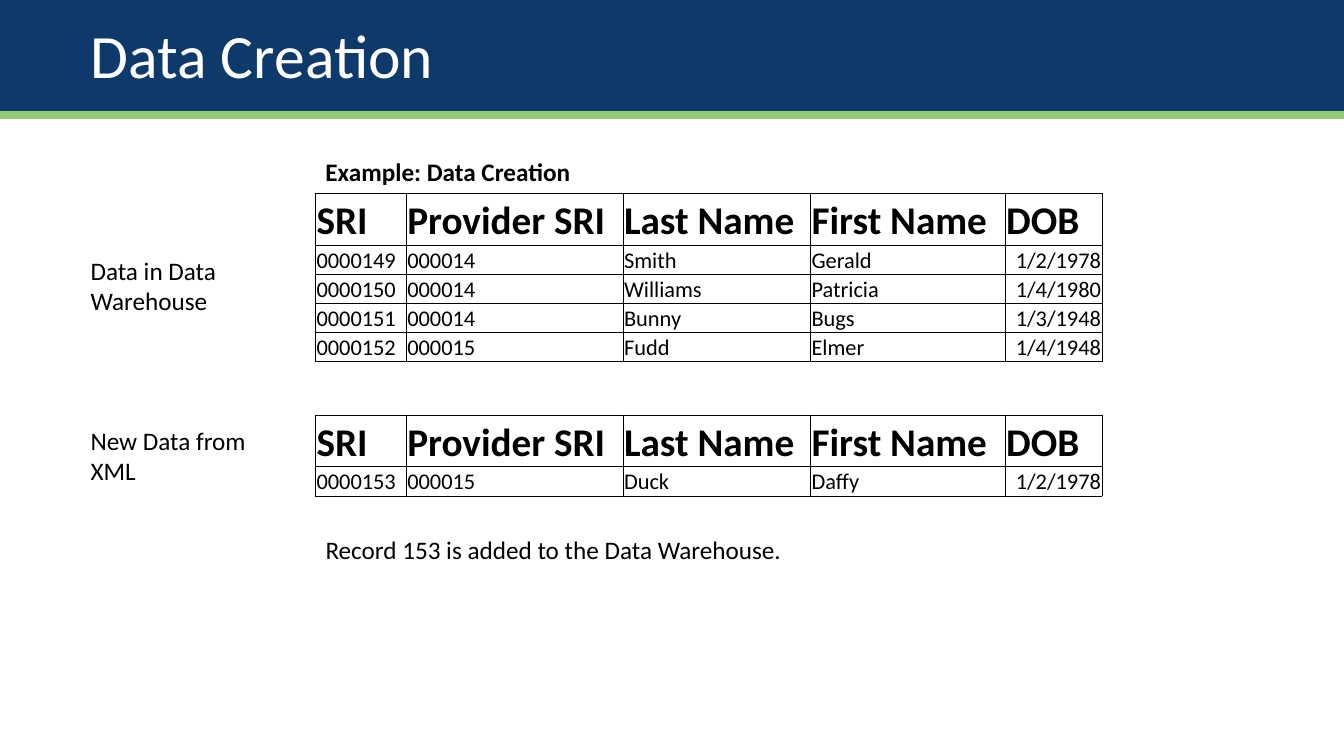
"""Builds the Data Creation slide with two record tables."""
from lxml import etree
from pptx import Presentation
from pptx import util as u
from pptx.dml.color import RGBColor
from pptx.enum import shapes, text
from pptx.oxml.ns import qn

TITLE = "Data Creation"
HEADER = ("SRI", "Provider SRI", "Last Name", "First Name", "DOB")
WAREHOUSE = [
    ("0000149", "000014", "Smith", "Gerald", "1/2/1978"),
    ("0000150", "000014", "Williams", "Patricia", "1/4/1980"),
    ("0000151", "000014", "Bunny", "Bugs", "1/3/1948"),
    ("0000152", "000015", "Fudd", "Elmer", "1/4/1948"),
]
NEW_DATA = [("0000153", "000015", "Duck", "Daffy", "1/2/1978")]

COLORS = {"navy": "0E396B", "green": "94CC75", "black": "000000", "white": "FFFFFF"}
FONT = "Calibri"
WIDTH, HEIGHT = 13.33, 7.5
MARGIN, TABLE_LEFT = 0.8, 3.13
COLUMNS = (0.9, 2.15, 1.86, 1.93, 0.96)
HEADER_ROW, BODY_ROW = 0.51, 0.29
LABEL_WIDTH, LABEL_HEIGHT, LINE_HEIGHT = 2.04, 0.71, 0.4

BANDS = [(0.09, 1.09, "green"), (0, 1.1, "navy")]
TABLES = [(1.92, WAREHOUSE), (4.12, NEW_DATA)]
NOTES = [
    ("Example: Data Creation", TABLE_LEFT, 1.5, 4.6, LINE_HEIGHT, True),
    ("Record 153 is added to the Data Warehouse.", TABLE_LEFT, 5.25, 8.79, LINE_HEIGHT, False),
    ("Data in Data Warehouse", MARGIN, 2.48, LABEL_WIDTH, LABEL_HEIGHT, False),
    ("New Data from XML", MARGIN, 4.17, LABEL_WIDTH, LABEL_HEIGHT, False),
]


def color(name):
    return RGBColor.from_string(COLORS[name])


def inches(*lengths):
    return [u.Inches(length) for length in lengths]


def write(para, words, size, ink="black", bold=False):
    span = para.add_run()
    span.text = words
    span.font.name, span.font.size, span.font.bold = FONT, u.Pt(size), bold
    span.font.color.rgb = color(ink)


def add_bands(page):
    for index, (top, height, fill) in enumerate(BANDS):
        band = page.shapes.add_shape(
            shapes.MSO_SHAPE.RECTANGLE, *inches(0, top, WIDTH, height))
        band.shadow.inherit = False
        band.fill.solid()
        band.fill.fore_color.rgb = color(fill)
        band.line.fill.background()
        page.shapes._spTree.insert(2 + index, band._element)


def add_title(page):
    title = page.shapes.title
    title.left, title.top, title.width, title.height = inches(MARGIN, 0.2, 11.77, 1.06)
    frame = title.text_frame
    frame.auto_size = text.MSO_AUTO_SIZE.NONE
    frame.vertical_anchor = text.MSO_ANCHOR.TOP
    para = frame.paragraphs[0]
    para.alignment = text.PP_ALIGN.LEFT
    para.line_spacing = 0.9
    write(para, TITLE, 44, "white")


def add_note(page, words, left, top, width, height, bold):
    frame = page.shapes.add_textbox(*inches(left, top, width, height)).text_frame
    frame.word_wrap = True
    frame.auto_size = text.MSO_AUTO_SIZE.SHAPE_TO_FIT_TEXT
    write(frame.paragraphs[0], words, 18, bold=bold)


def add_borders(cell):
    properties = cell._tc.get_or_add_tcPr()
    for side in ("a:lnL", "a:lnR", "a:lnT", "a:lnB"):
        line = etree.SubElement(properties, qn(side), w=str(u.Pt(0.5)))
        fill = etree.SubElement(line, qn("a:solidFill"))
        etree.SubElement(fill, qn("a:srgbClr"), val=COLORS["black"])


def format_cell(cell, words, is_header, is_date):
    cell.margin_left, cell.margin_right, cell.margin_top, cell.margin_bottom = inches(
        0.01, 0.01, 0.01, 0)
    cell.vertical_anchor = text.MSO_ANCHOR.BOTTOM
    add_borders(cell)
    cell.fill.background()
    para = cell.text_frame.paragraphs[0]
    if is_date and not is_header:
        para.alignment = text.PP_ALIGN.RIGHT
    write(para, words, 28 if is_header else 16, bold=is_header)


def add_records(page, top, records):
    rows = [HEADER, *records]
    heights = [HEADER_ROW] + [BODY_ROW] * len(records)
    table = page.shapes.add_table(
        len(rows), len(COLUMNS),
        *inches(TABLE_LEFT, top, sum(COLUMNS), sum(heights))).table
    table.first_row = table.horz_banding = False
    for column, width in zip(table.columns, COLUMNS):
        column.width = u.Inches(width)
    for r, (values, height) in enumerate(zip(rows, heights)):
        table.rows[r].height = u.Inches(height)
        for c, words in enumerate(values):
            format_cell(table.cell(r, c), words, r == 0, c == len(COLUMNS) - 1)


def main():
    deck = Presentation()
    deck.slide_width, deck.slide_height = inches(WIDTH, HEIGHT)
    page = deck.slides.add_slide(deck.slide_layouts[5])
    add_bands(page)
    add_title(page)
    for top, records in TABLES:
        add_records(page, top, records)
    for note in NOTES:
        add_note(page, *note)
    deck.save("out.pptx")


if __name__ == "__main__":
    main()
